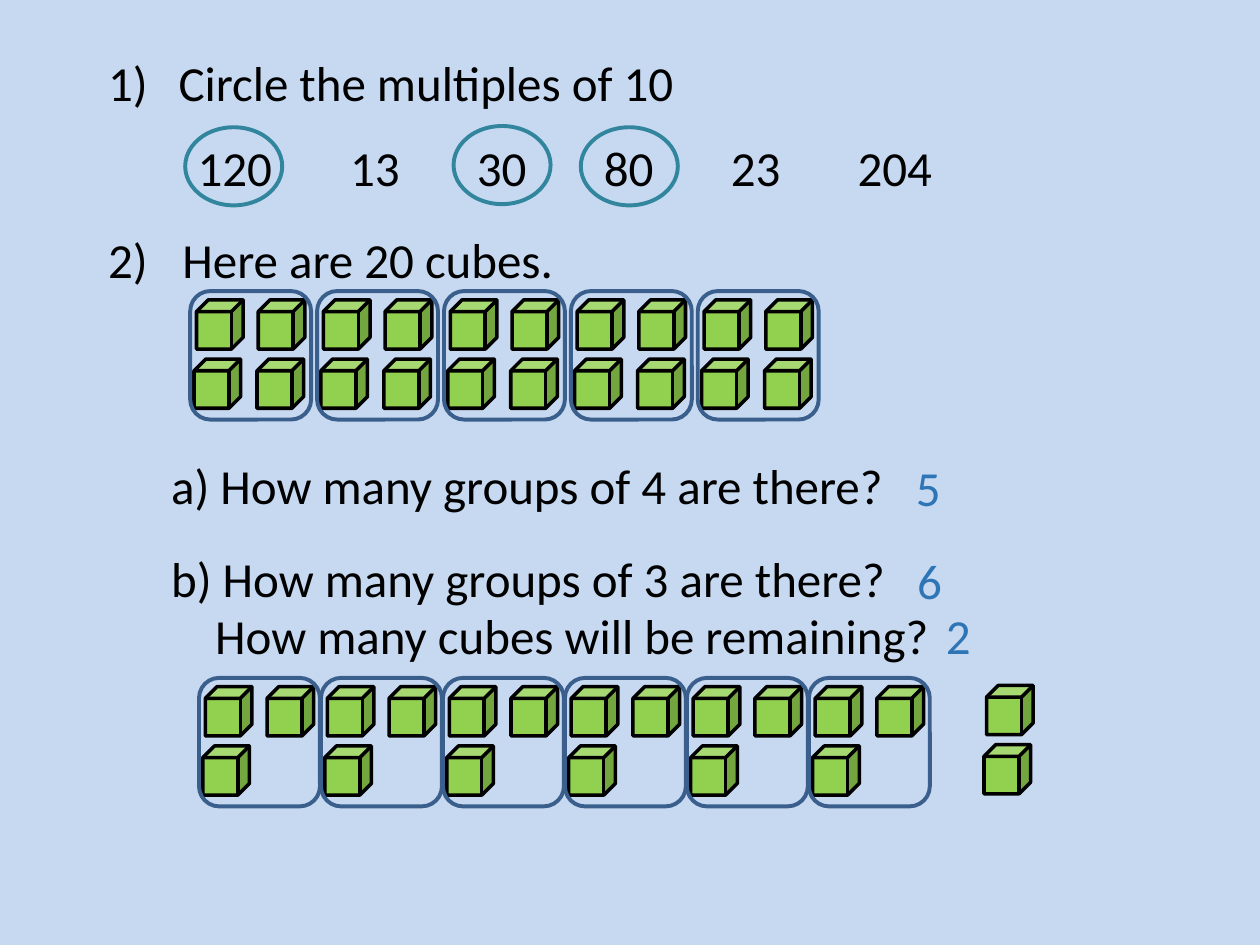
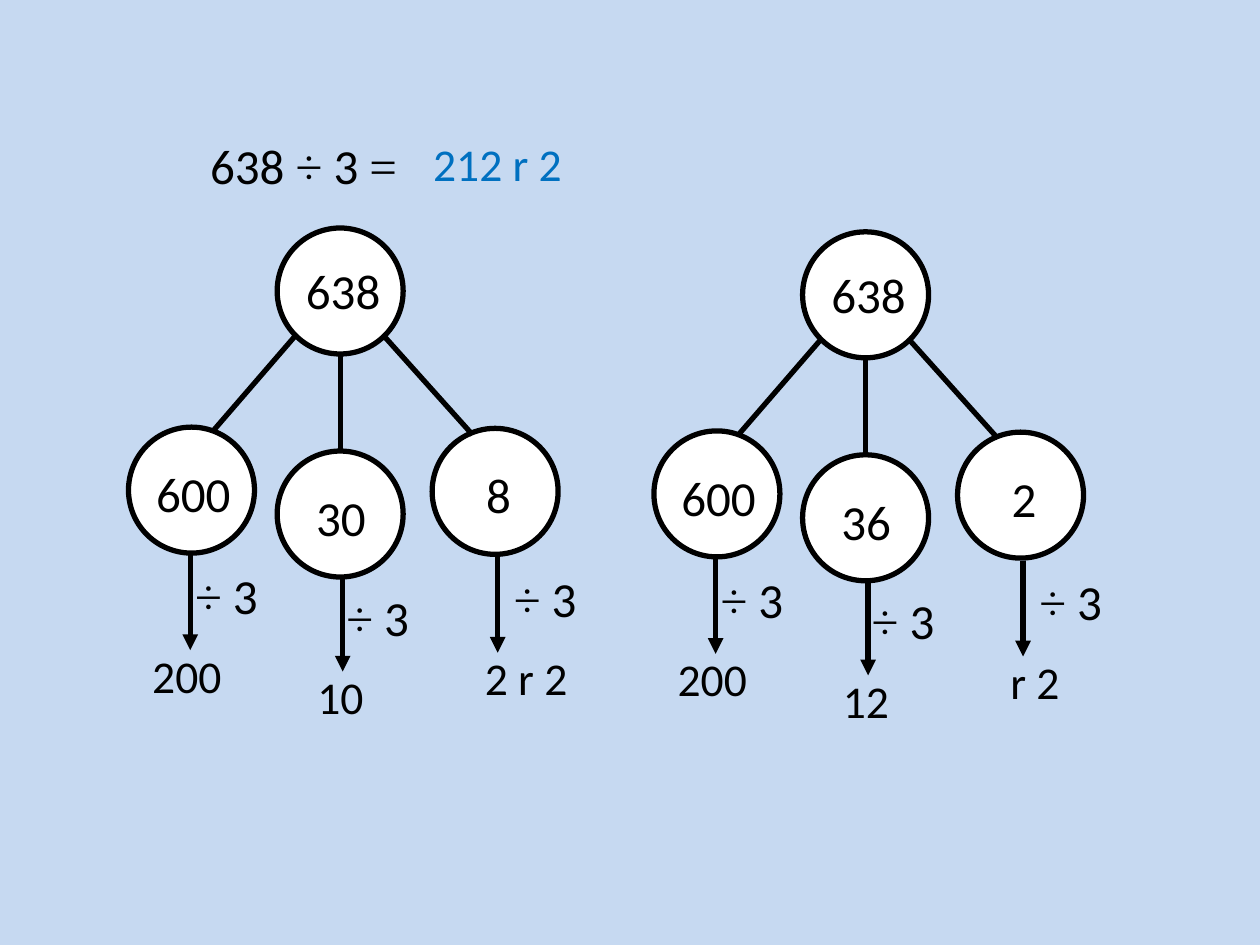
from itertools import groupby
from pptx import Presentation, util as u
from pptx.dml.color import RGBColor
from pptx.enum import shapes as sh
from pptx.oxml import parse_xml
from pptx.oxml.ns import nsdecls, qn

PAPER, INK, WHITE = "C6D9F1", "000000", "FFFFFF"
GREEN, TEAL, NAVY = "92D050", "31859C", "3A5F8C"
REPLY, BRIGHT = "2E75B6", "0070C0"
FACE, MATH = "Calibri", "Times New Roman"
COLS = 10

deck = Presentation()
deck.slide_width, deck.slide_height = u.Inches(10), u.Inches(7.5)
CELL = deck.slide_width // COLS


def grid(*spans):
    """Turn columns or rows into slide lengths."""
    return [round(CELL * n) for n in spans]


def paint(part, hue):
    """Set a fill or a font to a colour."""
    if hasattr(part, "solid"):
        part.solid()
        part.fore_color.rgb = RGBColor.from_string(hue)
    else:
        part.color.rgb = RGBColor.from_string(hue)


def page():
    """Add a blank slide with the shared background."""
    slide = deck.slides.add_slide(deck.slide_layouts[6])
    paint(slide.background.fill, PAPER)
    return slide.shapes


def shape(host, kind, box, edge, wide, fill=None):
    """Draw a preset shape with an outline."""
    item = host.add_shape(kind, *grid(*box))
    item.shadow.inherit = False
    if fill:
        paint(item.fill, fill)
    else:
        item.fill.background()
    paint(item.line, edge)
    item.line.width = u.Pt(wide)


def line(host, start, end, arrow=False):
    """Draw a straight black line, with an arrowhead if asked."""
    item = host.add_connector(sh.MSO_CONNECTOR.STRAIGHT, *grid(*start, *end))
    paint(item.line, INK)
    item.line.width = u.Pt(3)
    props = item._element.spPr
    if arrow:
        head = parse_xml(f'<a:tailEnd {nsdecls("a")} type="triangle"/>')
        props.find(qn("a:ln")).append(head)
    props.append(parse_xml(f'<a:effectLst {nsdecls("a")}/>'))


def write(para, words, size=28, hue=INK):
    """Fill a paragraph, with operators in the maths face."""
    para.font.size, para.font.name = u.Pt(size), FACE
    paint(para.font, hue)
    for sign, chars in groupby(words, lambda c: c in "÷="):
        run = para.add_run()
        run.text = "".join(chars)
        if sign:
            run.font.name = MATH


def frame(host, box):
    """Add a wrapping text box and return its frame."""
    body = host.add_textbox(*grid(*box)).text_frame
    body.word_wrap = True
    return body


def label(host, x, y, words, wide=1.02, size=28, hue=INK):
    """Place one line of text."""
    write(frame(host, (x, y, wide, 0.55)).paragraphs[0], words, size, hue)


def quiz(host, box):
    """Write the questions with indents and gaps."""
    rows = [
        ("Circle the multiples of 10", 0, 0.56, -0.56),
        ("2)\tHere are 20 cubes.", 68, 0.59, -0.59),
        ("a) How many groups of 4 are there?", 96.5, 0.5, 0),
        ("b) How many groups of 3 are there?", 20, 0.5, 0),
        ("How many cubes will be remaining?", 0, 0.85, 0),
    ]
    body = frame(host, box)
    for i, (words, gap, left, first) in enumerate(rows):
        para = body.add_paragraph() if i else body.paragraphs[0]
        write(para, words)
        para.line_spacing, para.space_before = 0.98, u.Pt(gap)
        props = para._p.get_or_add_pPr()
        for name, span in zip(("marL", "indent"), grid(left, first)):
            props.set(name, str(span))
        if i == 0:
            mark = f'<a:buAutoNum {nsdecls("a")} type="arabicParenR"/>'
            props.insert_element_before(parse_xml(mark), "a:defRPr")


def choices(host, x, y):
    """Set out the numbers and ring the multiples of ten."""
    lefts = [x] + [x + 1.21 + 1.007 * n for n in range(5)]
    for left, words in zip(lefts, ("120", "13", "30", "80", "23", "204")):
        label(host, left, y, words)
    for dx, dy in ((0, -0.03), (2.13, -0.04), (3.14, -0.03)):
        box = (x + dx, y + dy, 0.77, 0.62)
        shape(host, sh.MSO_SHAPE.OVAL, box, TEAL, 2.25)


def cubes(host, x, y, spots):
    """Place cubes at spots in a group's box."""
    for dx, dy in spots:
        shape(host, sh.MSO_SHAPE.CUBE, (x + dx, y + dy, 0.37, 0.39), INK, 2, GREEN)


def sets(host, x, y, step, count, spots):
    """Draw a row of ringed cube groups."""
    lefts = [x + step * n for n in range(count)]
    for left in lefts:
        cubes(host, left, y, spots)
    for left in lefts:
        box = (left, y, 0.96, 1.02)
        shape(host, sh.MSO_SHAPE.ROUNDED_RECTANGLE, box, NAVY, 2.25)


def groups():
    """Build the slide on multiples and grouping."""
    host = page()
    quiz(host, (0.76, 0.39, 8.2, 6.43))
    choices(host, 1.47, 1.04)
    pair, third = [(0.05, 0.07), (0.03, 0.54)], (0.54, 0.07)
    sets(host, 1.51, 2.31, 1.007, 5, [*pair, third, (0.53, 0.54)])
    sets(host, 1.58, 5.38, 0.968, 6, [*pair, third])
    cubes(host, 7.78, 5.37, pair)
    for x, y, words in ((7.17, 3.58, "5"), (7.18, 4.32, "6"), (7.41, 4.76, "2")):
        label(host, x, y, words, 0.5, hue=REPLY)


def tree(host, x, y, parts, ends):
    """Draw a part-whole tree with each part divided by three."""
    nodes = [(0, 1.58), (1.18, 1.77), (2.41, 1.59)]
    rods = [((1.32, 0.86), (0.68, 1.6)), ((1.68, 1), (1.68, 1.76)),
            ((2.03, 0.86), (2.73, 1.64))]
    shifts = [(0.12, 0.49, 0.43, 0.09, 1.01), (0.21, 0.52, 0.45, 0.22, 0.99),
              (0.33, 0.52, 0.55, 0.32, 1.02)]
    bunch = host.add_group_shape().shapes
    for dx, dy in [(1.18, 0), *nodes]:
        shape(bunch, sh.MSO_SHAPE.OVAL, (x + dx, y + dy, 1, 1), INK, 3, WHITE)
    for start, end in rods:
        line(bunch, *[(x + dx, y + dy) for dx, dy in (start, end)])
    label(host, x + 1.31, y + 0.21, "638")
    for (dx, dy), shift, part, end in zip(nodes, shifts, parts, ends):
        name, stem, sign, last, drop = shift
        left, top = x + dx, y + dy
        foot = top + drop
        label(host, left + name, top + 0.24, part)
        line(host, (left + stem, foot), (left + stem, foot + 0.76), True)
        label(host, left + sign, foot + 0.04, "÷ 3", 0.78)
        label(host, left + last, foot + 0.69, end, 1.08, 26)


def divide():
    """Build the slide on division by partitioning."""
    host = page()
    label(host, 1.57, 1.03, "638 ÷ 3 =", 1.93)
    label(host, 3.34, 1.03, "212 r 2", 1.9, 26, BRIGHT)
    tree(host, 1.02, 1.81, ("600", "30", "8"), ("200", "10", "2 r 2"))
    tree(host, 5.19, 1.84, ("600", "36", "2"), ("200", "12", "r 2"))


if __name__ == "__main__":
    groups()
    divide()
    deck.save("out.pptx")
